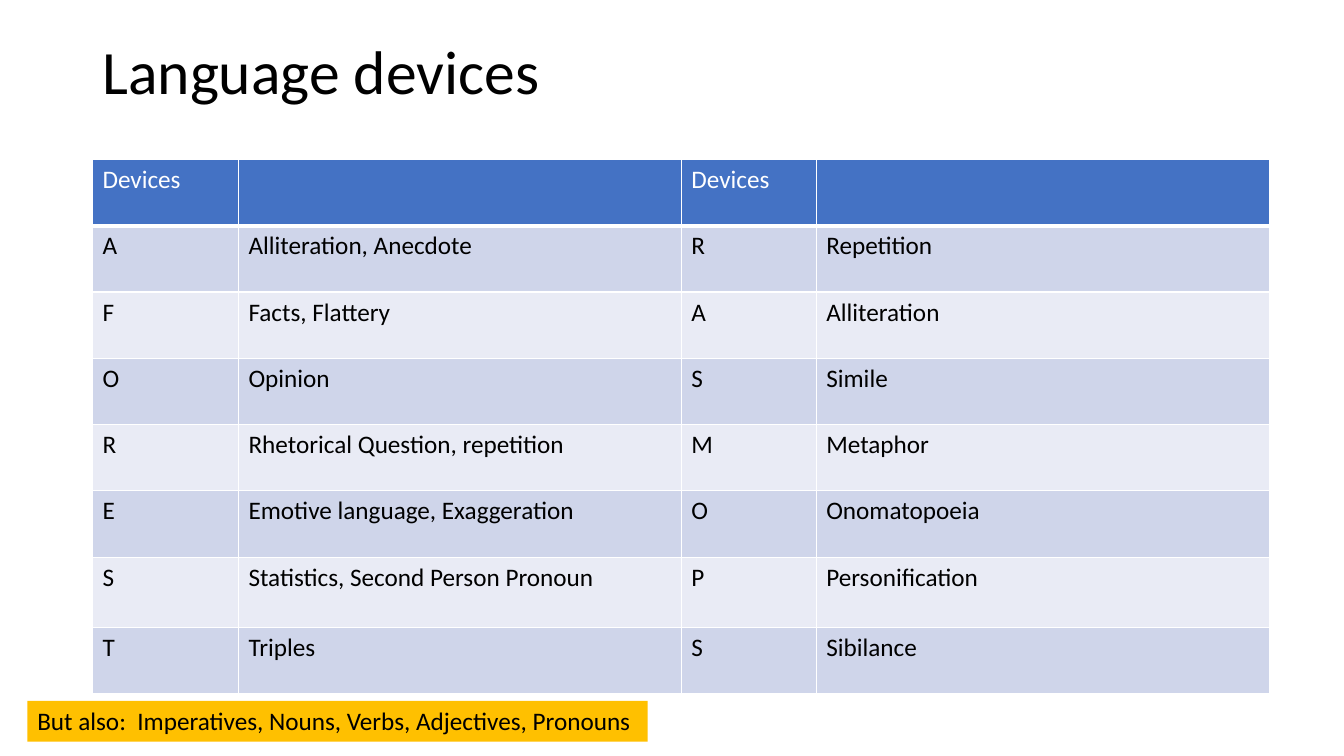
from dataclasses import dataclass

from lxml.etree import SubElement
from pptx import Presentation
from pptx.dml.color import RGBColor
from pptx.enum.shapes import MSO_SHAPE as Shape
from pptx.enum.text import MSO_ANCHOR as Anchor, PP_ALIGN as Align
from pptx.oxml.ns import qn
from pptx.util import Cm, Pt


@dataclass(frozen=True)
class Theme:
    font: str = "Calibri"
    title_size: int = 44
    body_size: int = 18
    ink: str = "000000"
    paper: str = "FFFFFF"
    header: str = "4472C4"
    bands: tuple = ("CFD5EA", "E9EBF5")
    note: str = "FFC000"
    rule: int = 1
    header_rule: int = 3


HEADINGS = ("Devices", "", "Devices", "")
DEVICES = (
    ("A", "Alliteration, Anecdote", "R", "Repetition"),
    ("F", "Facts, Flattery", "A", "Alliteration"),
    ("O", "Opinion", "S", "Simile"),
    ("R", "Rhetorical Question, repetition", "M", "Metaphor"),
    ("E", "Emotive language, Exaggeration", "O", "Onomatopoeia"),
    ("S", "Statistics, Second Person Pronoun", "P", "Personification"),
    ("T", "Triples", "S", "Sibilance"),
)
COLUMN_WIDTHS = (3.68, 11.16, 3.4, 11.43)
ROW_HEIGHTS = (1.67,) * 6 + (1.78, 1.67)


class SlideBuilder:
    def __init__(self, page, theme):
        self.page = page
        self.theme = theme

    def set_text(self, frame, text, size, color):
        para = frame.paragraphs[0]
        para.text = text
        para.alignment = Align.LEFT
        font = para.font
        font.name, font.size, font.bold = self.theme.font, Pt(size), False
        font.color.rgb = RGBColor.from_string(color)
        return para

    def title(self, text, left, top, width, height):
        box = self.page.shapes.add_textbox(Cm(left), Cm(top), Cm(width), Cm(height))
        frame = box.text_frame
        frame.word_wrap = True
        frame.vertical_anchor = Anchor.MIDDLE
        para = self.set_text(frame, text, self.theme.title_size, self.theme.ink)
        para.line_spacing = 0.9

    def borders(self, cell, bottom):
        # Border lines come before the fill in the cell properties
        properties = cell._tc.get_or_add_tcPr()
        widths = dict.fromkeys(("a:lnL", "a:lnR", "a:lnT"), self.theme.rule)
        for side, width in {**widths, "a:lnB": bottom}.items():
            line = SubElement(properties, qn(side), w=str(Pt(width)))
            fill = SubElement(line, qn("a:solidFill"))
            SubElement(fill, qn("a:srgbClr"), val=self.theme.paper)

    def cell(self, cell, text, fill, color, bottom):
        self.borders(cell, bottom)
        cell.fill.solid()
        cell.fill.fore_color.rgb = RGBColor.from_string(fill)
        self.set_text(cell.text_frame, text, self.theme.body_size, color)

    def table(self, rows, left, top, widths, heights):
        theme = self.theme
        table = self.page.shapes.add_table(
            len(rows), len(widths), Cm(left), Cm(top),
            Cm(sum(widths)), Cm(sum(heights))).table
        for column, width in zip(table.columns, widths):
            column.width = Cm(width)
        for index, (row, texts) in enumerate(zip(table.rows, rows)):
            row.height = Cm(heights[index])
            if index == 0:
                style = (theme.header, theme.paper, theme.header_rule)
            else:
                style = (theme.bands[(index - 1) % 2], theme.ink, theme.rule)
            for cell, text in zip(row.cells, texts):
                self.cell(cell, text, *style)

    def note(self, text, left, top, width, height):
        box = self.page.shapes.add_shape(
            Shape.RECTANGLE, Cm(left), Cm(top), Cm(width), Cm(height))
        box.shadow.inherit = False
        box.fill.solid()
        box.fill.fore_color.rgb = RGBColor.from_string(self.theme.note)
        box.line.fill.background()
        frame = box.text_frame
        frame.word_wrap = False
        frame.vertical_anchor = Anchor.TOP
        self.set_text(frame, text, self.theme.body_size, self.theme.ink)


def main():
    deck = Presentation()
    deck.slide_width, deck.slide_height = Cm(33.87), Cm(19.05)
    page = deck.slides.add_slide(deck.slide_layouts[6])
    builder = SlideBuilder(page, Theme())

    # Heading
    builder.title("Language devices", 2.33, 0.03, 29.21, 3.68)

    # Two mnemonics side by side
    builder.table((HEADINGS,) + DEVICES, 2.33, 4.02, COLUMN_WIDTHS, ROW_HEIGHTS)

    # Highlighted reminder
    builder.note("But also:  Imperatives, Nouns, Verbs, Adjectives, Pronouns",
                 0.69, 17.66, 15.63, 1.03)

    deck.save("out.pptx")


if __name__ == "__main__":
    main()
